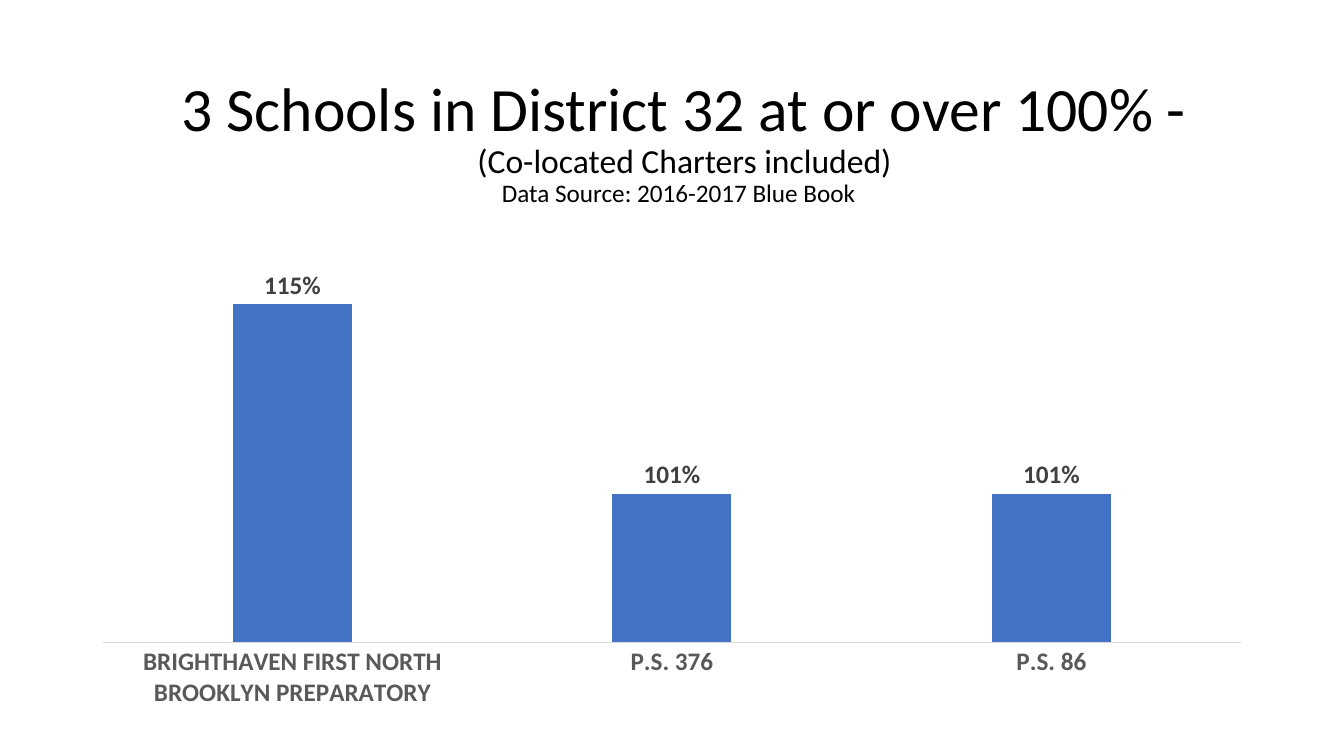
import copy

import lxml.etree
import pptx
import pptx.chart.data
import pptx.dml.color
import pptx.enum.chart
import pptx.enum.text
import pptx.oxml.ns
import pptx.util

PX = 914400 / 100.8
FONT = "Calibri"
BLACK = pptx.dml.color.RGBColor(0x00, 0x00, 0x00)
BAR_BLUE = pptx.dml.color.RGBColor(0x44, 0x72, 0xC4)
LABEL_GRAY = pptx.dml.color.RGBColor(0x40, 0x40, 0x40)
AXIS_GRAY = pptx.dml.color.RGBColor(0x59, 0x59, 0x59)
LINE_GRAY = pptx.dml.color.RGBColor(0xD9, 0xD9, 0xD9)

TITLE_LINES = [
    ("3 Schools in District 32 at or over 100% -", 44),
    ("(Co-located Charters included)", 24),
    ("Data Source: 2016-2017 Blue Book  ", 18),
]
UTILIZATION = {
    "BRIGHTHAVEN FIRST NORTH BROOKLYN PREPARATORY": 1.15,
    "P.S. 376": 1.01,
    "P.S. 86": 1.01,
}


def px(length):
    return pptx.util.Emu(round(length * PX))


def style_font(font, size, color, bold=False):
    font.name = FONT
    font.size = pptx.util.Pt(size)
    font.bold = bold
    font.color.rgb = color


def fill_title(title, left, top, width, height):
    title.left, title.top = px(left), px(top)
    title.width, title.height = px(width), px(height)
    frame = title.text_frame
    frame.word_wrap = True
    frame.auto_size = pptx.enum.text.MSO_AUTO_SIZE.NONE
    frame.vertical_anchor = pptx.enum.text.MSO_ANCHOR.MIDDLE
    paragraph = frame.paragraphs[0]
    paragraph.alignment = pptx.enum.text.PP_ALIGN.CENTER
    paragraph.line_spacing = 0.9
    for index, (text, size) in enumerate(TITLE_LINES):
        if index:
            # The break takes the size of the line it ends
            paragraph.add_line_break()
            line_break = paragraph.runs[-1]._r.getnext()
            line_break.append(copy.deepcopy(paragraph.runs[-1]._r.rPr))
        run = paragraph.add_run()
        run.text = text
        style_font(run.font, size, BLACK)


def set_plot_area(chart, **fractions):
    """Fix the inner plot area, in fractions of the chart."""
    qn = pptx.oxml.ns.qn
    plot_area = chart._chartSpace.chart.plotArea
    for old_layout in plot_area.findall(qn("c:layout")):
        plot_area.remove(old_layout)
    layout = lxml.etree.Element(qn("c:layout"))
    manual = lxml.etree.SubElement(layout, qn("c:manualLayout"))
    settings = {"layoutTarget": "inner", "xMode": "edge", "yMode": "edge", **fractions}
    for name, value in settings.items():
        lxml.etree.SubElement(manual, qn("c:" + name)).set("val", str(value))
    plot_area.insert(0, layout)


def add_column_chart(slide, left, top, width, height):
    data = pptx.chart.data.CategoryChartData(number_format="0%")
    data.categories = list(UTILIZATION)
    data.add_series("Series 1", list(UTILIZATION.values()))
    chart = slide.shapes.add_chart(
        pptx.enum.chart.XL_CHART_TYPE.COLUMN_CLUSTERED,
        px(left), px(top), px(width), px(height), data,
    ).chart
    chart.has_title = False
    chart.has_legend = False
    style_font(chart.font, 10, BLACK)
    set_plot_area(chart, x=0.02, y=0.02, w=0.96, h=0.83)

    # Bars and their labels
    plot = chart.plots[0]
    plot.gap_width = 219
    plot.overlap = -27
    plot.vary_by_categories = False
    fill = plot.series[0].format.fill
    fill.solid()
    fill.fore_color.rgb = BAR_BLUE
    labels = plot.series[0].data_labels
    labels.show_value = True
    labels.number_format = "0%"
    labels.number_format_is_linked = False
    labels.position = pptx.enum.chart.XL_LABEL_POSITION.OUTSIDE_END
    style_font(labels.font, 18, LABEL_GRAY, bold=True)

    # Axes
    category_axis = chart.category_axis
    category_axis.major_tick_mark = pptx.enum.chart.XL_TICK_MARK.NONE
    category_axis.format.line.color.rgb = LINE_GRAY
    category_axis.format.line.width = pptx.util.Pt(0.75)
    style_font(category_axis.tick_labels.font, 18, AXIS_GRAY, bold=True)
    value_axis = chart.value_axis
    value_axis.minimum_scale = 0.9
    value_axis.maximum_scale = 1.2
    value_axis.has_major_gridlines = False
    value_axis.visible = False


def main():
    presentation = pptx.Presentation()
    presentation.slide_width = px(1344)
    presentation.slide_height = px(756)
    slide = presentation.slides.add_slide(presentation.slide_layouts[5])
    fill_title(slide.shapes.title, 105, 70, 1159, 146)
    add_column_chart(slide, 79, 227, 1186, 489)
    presentation.save("out.pptx")


if __name__ == "__main__":
    main()
